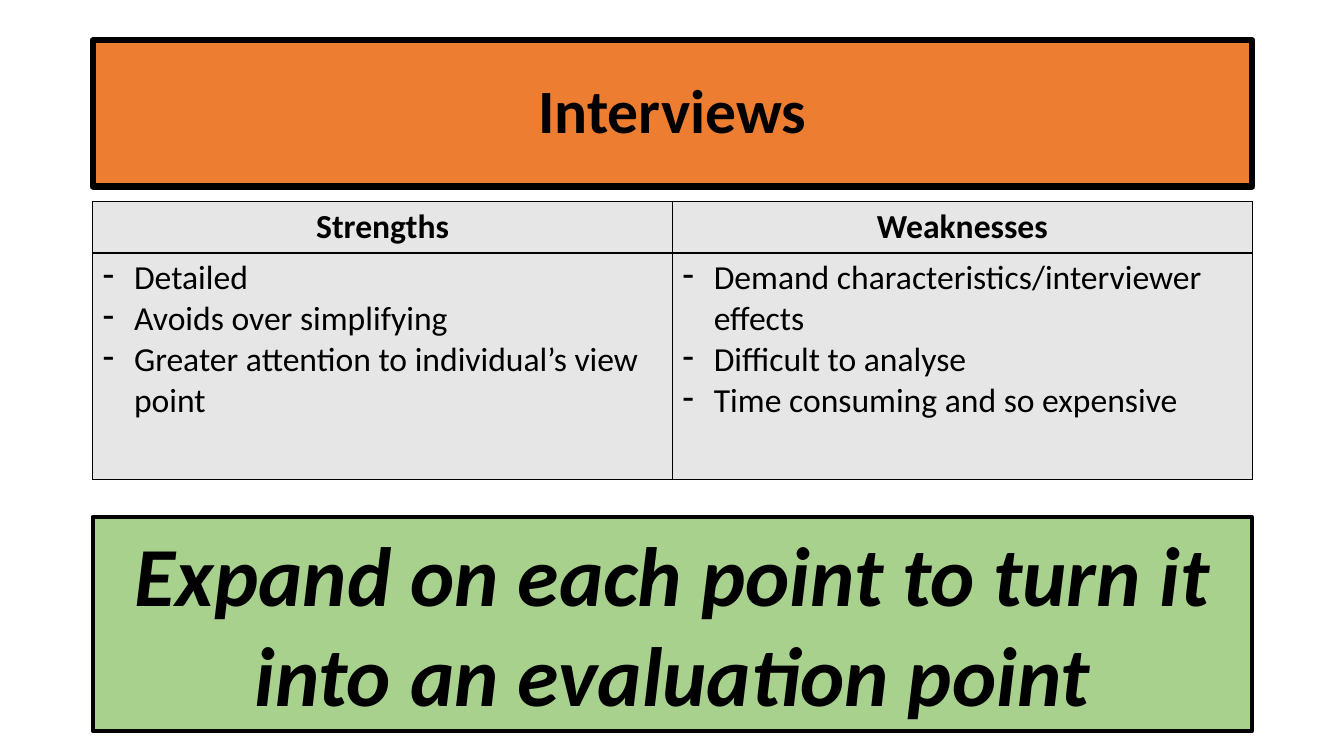
from lxml.etree import SubElement
from pptx import Presentation
from pptx.dml.color import RGBColor
from pptx.enum.shapes import MSO_SHAPE
from pptx.enum.text import MSO_ANCHOR, MSO_AUTO_SIZE, PP_ALIGN
from pptx.oxml.ns import qn
from pptx.util import Inches, Pt

COLORS = {"ink": "000000", "title": "ED7D31", "cell": "E7E6E6", "task": "A9D18E"}
POINTS = {
    "Strengths": [
        "Detailed",
        "Avoids over simplifying",
        "Greater attention to individual’s view point",
    ],
    "Weaknesses": [
        "Demand characteristics/interviewer effects",
        "Difficult to analyse",
        "Time consuming and so expensive",
    ],
}
LEFT, WIDTH = 0.92, 11.5


def color(name):
    return RGBColor.from_string(COLORS[name])


def write(frame, lines, size=24, bold=False, italic=False,
          align=PP_ALIGN.CENTER, spacing=None, dash=False):
    frame.word_wrap = True
    for i, line in enumerate(lines):
        para = frame.add_paragraph() if i else frame.paragraphs[0]
        para.text = line
        para.alignment = align
        if spacing:
            para.line_spacing = spacing
        if dash:
            props = para._p.get_or_add_pPr()
            props.set("marL", str(Inches(0.31)))
            props.set("indent", str(-Inches(0.31)))
            SubElement(props, qn("a:buChar"), char="-")
        font = para.runs[0].font
        font.name, font.size = "Calibri", Pt(size)
        font.bold, font.italic = bold, italic
        font.color.rgb = color("ink")


def paint(shape, fill, line):
    shape.fill.solid()
    shape.fill.fore_color.rgb = color(fill)
    shape.line.color.rgb = color("ink")
    shape.line.width = Pt(line)


def border(cell):
    """Draw a thin line on all four sides; call before filling the cell."""
    props = cell._tc.get_or_add_tcPr()
    for side in ("lnL", "lnR", "lnT", "lnB"):
        line = SubElement(props, qn(f"a:{side}"), w=str(Pt(1)))
        fill = SubElement(line, qn("a:solidFill"))
        SubElement(fill, qn("a:srgbClr"), val=COLORS["ink"])


def add_title(slide, left, top, width, height):
    title = slide.shapes.title
    title.left, title.top = Inches(left), Inches(top)
    title.width, title.height = Inches(width), Inches(height)
    paint(title, "title", 4.5)
    frame = title.text_frame
    frame.auto_size = MSO_AUTO_SIZE.NONE
    frame.vertical_anchor = MSO_ANCHOR.MIDDLE
    write(frame, ["Interviews"], size=44, bold=True, spacing=0.9)


def add_points(slide, left, top, width, height, head=0.51):
    table = slide.shapes.add_table(
        2, len(POINTS), Inches(left), Inches(top), Inches(width), Inches(height)
    ).table
    table.rows[0].height = Inches(head)
    table.rows[1].height = Inches(height - head)
    for col, (name, items) in enumerate(POINTS.items()):
        table.columns[col].width = Inches(width / len(POINTS))
        write(table.cell(0, col).text_frame, [name], bold=True)
        write(table.cell(1, col).text_frame, items, align=PP_ALIGN.LEFT, dash=True)
    for cell in table.iter_cells():
        border(cell)
        cell.fill.solid()
        cell.fill.fore_color.rgb = color("cell")


def add_task(slide, left, top, width, height):
    box = slide.shapes.add_shape(
        MSO_SHAPE.RECTANGLE, Inches(left), Inches(top), Inches(width), Inches(height)
    )
    box.shadow.inherit = False
    paint(box, "task", 3)
    frame = box.text_frame
    frame.auto_size = MSO_AUTO_SIZE.SHAPE_TO_FIT_TEXT
    frame.vertical_anchor = MSO_ANCHOR.TOP
    write(frame, ["Expand on each point to turn it into an evaluation point"],
          size=60, bold=True, italic=True)


def main():
    deck = Presentation()
    deck.slide_width, deck.slide_height = Inches(13.33), Inches(7.5)
    slide = deck.slides.add_slide(deck.slide_layouts[5])
    add_title(slide, LEFT, 0.4, WIDTH, 1.45)
    add_points(slide, LEFT, 2, WIDTH, 2.76)
    add_task(slide, LEFT, 5.13, WIDTH, 2.12)
    deck.save("out.pptx")


if __name__ == "__main__":
    main()
